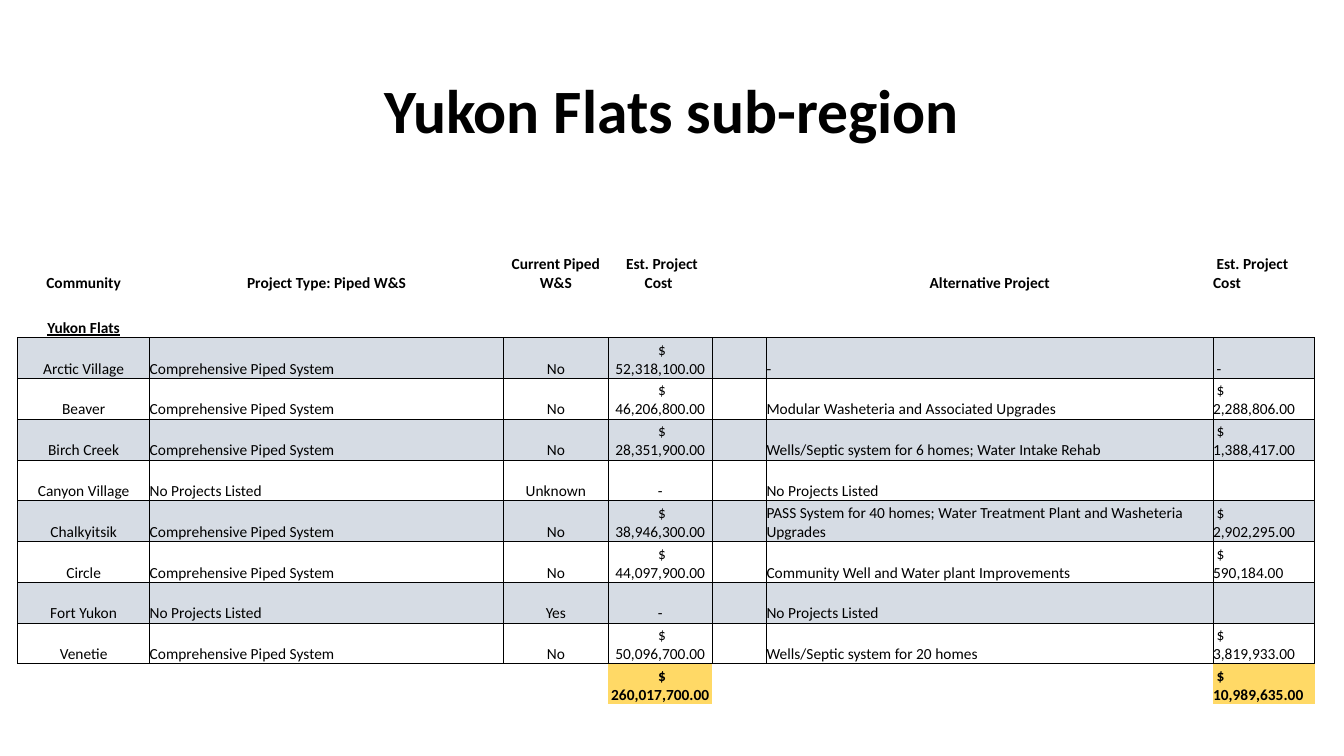
"""Build the Yukon Flats slide of water and sewer projects with their costs."""
from dataclasses import astuple, dataclass

import pptx
import pptx.dml.color
import pptx.enum.text
import pptx.oxml
import pptx.oxml.ns
import pptx.table
import pptx.util

Pt = pptx.util.Pt
RGBColor = pptx.dml.color.RGBColor
Align = pptx.enum.text.PP_ALIGN
Anchor = pptx.enum.text.MSO_ANCHOR

BLACK = RGBColor(0x00, 0x00, 0x00)
BAND = RGBColor(0xD6, 0xDC, 0xE4)
GOLD = RGBColor(0xFF, 0xD9, 0x66)
FONT = "Calibri"

COLUMN_WIDTHS = (94.3, 252.9, 74.6, 74.6, 38.6, 319, 72.5)
CENTERED_COLUMNS = (0, 2, 3)
HEADING_HEIGHT = 32.4
ROW_HEIGHT = 29.12
PIPED = "Comprehensive Piped System"
UNLISTED = "No Projects Listed"


@dataclass(frozen=True)
class Project:
    community: str = ""
    piped_project: str = ""
    has_piped: str = ""
    piped_cost: str = ""
    gap: str = ""
    alternative: str = ""
    alternative_cost: str = ""


HEADINGS = Project("Community", "Project Type: Piped W&S", "Current Piped W&S",
                   " Est. Project Cost ", "", "Alternative Project", " Est. Project Cost")
REGION = Project("Yukon Flats")
PROJECTS = (
    Project("Arctic Village", PIPED, "No", "$52,318,100.00", "", "-", " -"),
    Project("Beaver", PIPED, "No", "$46,206,800.00", "",
            "Modular Washeteria and Associated Upgrades", "$2,288,806.00"),
    Project("Birch Creek", PIPED, "No", "$28,351,900.00", "",
            "Wells/Septic system for 6 homes; Water Intake Rehab", "$1,388,417.00"),
    Project("Canyon Village", UNLISTED, "Unknown", " - ", "", UNLISTED),
    Project("Chalkyitsik", PIPED, "No", "$38,946,300.00", "",
            "PASS System for 40 homes; Water Treatment Plant and Washeteria Upgrades",
            "$2,902,295.00"),
    Project("Circle", PIPED, "No", "$44,097,900.00", "",
            "Community Well and Water plant Improvements", "$590,184.00"),
    Project("Fort Yukon", UNLISTED, "Yes", " - ", "", UNLISTED),
    Project("Venetie", PIPED, "No", "$50,096,700.00", "",
            "Wells/Septic system for 20 homes", "$3,819,933.00"),
)
TOTALS = Project(piped_cost="$260,017,700.00", alternative_cost="$10,989,635.00")


def set_borders(cell: pptx.table._Cell, ruled_sides: str) -> None:
    """Rule the sides named by the letters L, R, T and B and clear the others."""
    properties = cell._tc.get_or_add_tcPr()
    for side in "LRTB":
        paint = ('<a:solidFill><a:srgbClr val="000000"/></a:solidFill>'
                 if side in ruled_sides else "<a:noFill/>")
        properties.append(pptx.oxml.parse_xml(
            f'<a:ln{side} {pptx.oxml.ns.nsdecls("a")} w="{Pt(0.5)}">{paint}</a:ln{side}>'))


def write_cell(cell: pptx.table._Cell, text: str, centered: bool, bold: bool) -> None:
    """Write text at the cell's foot, with a dollar sign on its own line."""
    cell.margin_left = cell.margin_right = cell.margin_top = cell.margin_bottom = 0
    cell.vertical_anchor = Anchor.BOTTOM
    paragraph = cell.text_frame.paragraphs[0]
    paragraph.alignment = Align.CENTER if centered else Align.LEFT
    paragraph.font.name = FONT
    paragraph.font.size = Pt(11)
    paragraph.font.bold = bold
    paragraph.font.color.rgb = BLACK
    if text.startswith("$"):
        paragraph.add_run().text = " $"
        paragraph.add_line_break()
        paragraph.add_run().text = text[1:]
    elif text:
        paragraph.add_run().text = text


def add_title(slide: pptx.slide.Slide) -> None:
    """Add the centred slide title."""
    shape = slide.shapes.add_textbox(Pt(66), Pt(28.8), Pt(828), Pt(104.4))
    shape.text_frame.word_wrap = True
    shape.text_frame.vertical_anchor = Anchor.MIDDLE
    paragraph = shape.text_frame.paragraphs[0]
    paragraph.text = "Yukon Flats sub-region"
    paragraph.alignment = Align.CENTER
    paragraph.line_spacing = 0.9
    paragraph.font.name = FONT
    paragraph.font.size = Pt(44)
    paragraph.font.bold = True
    paragraph.font.color.rgb = BLACK


def add_project_table(slide: pptx.slide.Slide) -> None:
    """Add the table of headings, banded projects and totals."""
    rows = (HEADINGS, REGION, *PROJECTS, TOTALS)
    heights = [HEADING_HEIGHT] * 2 + [ROW_HEIGHT] * (len(rows) - 2)
    frame = slide.shapes.add_table(len(rows), len(COLUMN_WIDTHS), Pt(12.6), Pt(176.4),
                                   Pt(sum(COLUMN_WIDTHS)), Pt(sum(heights)))
    table = frame.table
    table.first_row = table.horz_banding = False
    for column, width in zip(table.columns, COLUMN_WIDTHS):
        column.width = Pt(width)
    for row_index, (project, height) in enumerate(zip(rows, heights)):
        table.rows[row_index].height = Pt(height)
        is_project = project in PROJECTS
        ruled_sides = "LRTB" if is_project else {REGION: "B", TOTALS: "T"}.get(project, "")
        for column_index, text in enumerate(astuple(project)):
            cell = table.cell(row_index, column_index)
            centered = column_index in CENTERED_COLUMNS or project is HEADINGS and column_index < 6
            write_cell(cell, text, centered, not is_project)
            set_borders(cell, ruled_sides)
            if is_project and row_index % 2 == 0:
                cell.fill.solid()
                cell.fill.fore_color.rgb = BAND
            elif project is TOTALS and text:
                cell.fill.solid()
                cell.fill.fore_color.rgb = GOLD
            else:
                cell.fill.background()
    table.cell(rows.index(REGION), 0).text_frame.paragraphs[0].font.underline = True


def main() -> None:
    """Create and save the presentation."""
    presentation = pptx.Presentation()
    presentation.slide_width = Pt(960)
    presentation.slide_height = Pt(540)
    slide = presentation.slides.add_slide(presentation.slide_layouts[6])
    add_title(slide)
    add_project_table(slide)
    presentation.save("out.pptx")


if __name__ == "__main__":
    main()
